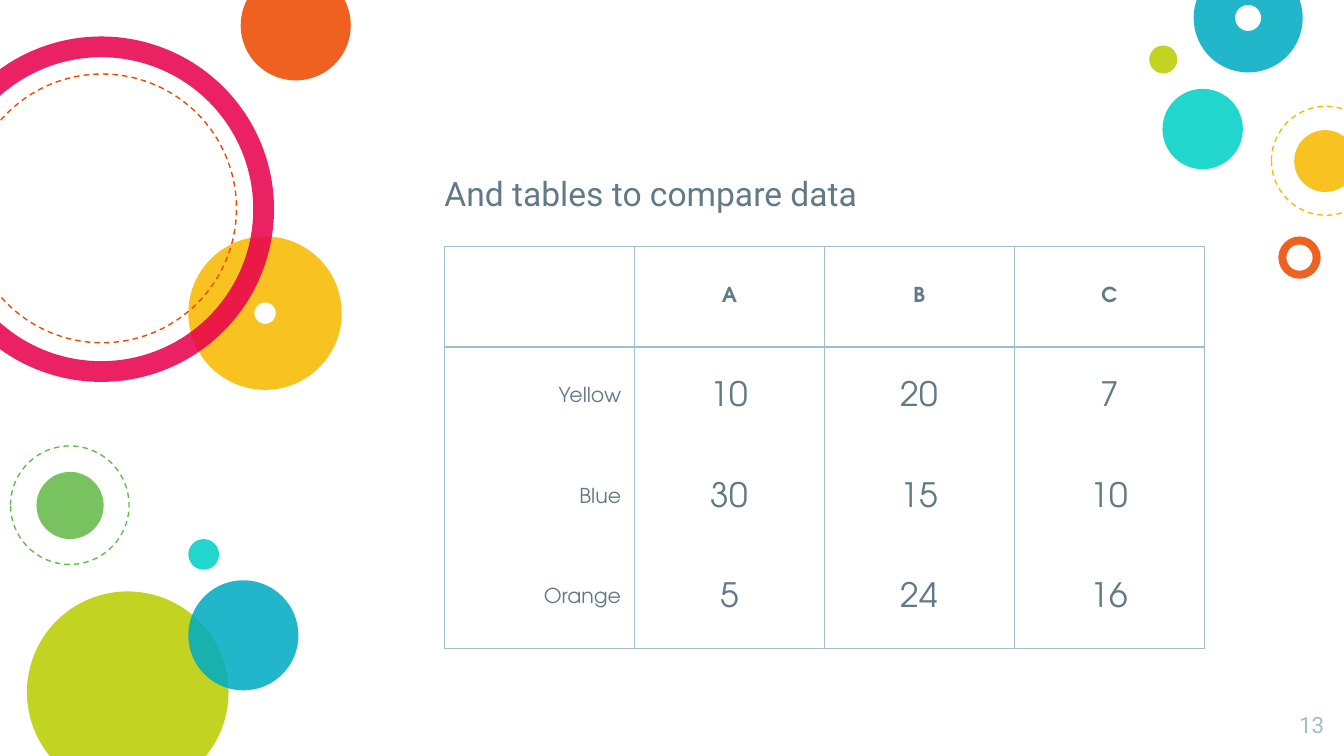
from lxml.etree import SubElement
from pptx import Presentation
from pptx.dml.color import RGBColor as Color
from pptx.enum.dml import MSO_LINE_DASH_STYLE as Dash
from pptx.enum.shapes import MSO_SHAPE as Preset
from pptx.enum.text import MSO_ANCHOR as Anchor, MSO_AUTO_SIZE as AutoSize, PP_ALIGN as Align
from pptx.oxml.ns import qn
from pptx.util import Cm, Pt

THEME = {
    "aqua": "00D1C6", "lime": "BBCD00", "green": "65BB48", "yellow": "F8BB00",
    "orange": "ED4A00", "pink": "E8004C", "blue": "00ACC3",
    "text": "617A86", "pale": "A1BECC",
    "sans": "Roboto", "rounded": "TeX Gyre Adventor",
    "large": 18, "number": 12, "label": 11, "line": 0.75, "opacity": 87,
}


def write(frame, text, color, font, size, align, bold=False):
    para = frame.paragraphs[0]
    para.alignment = align
    span = para.add_run()
    span.text = text
    formats = {"name": THEME[font], "size": Pt(THEME[size]), "bold": bold}
    for name, value in formats.items():
        setattr(span.font, name, value)
    span.font.color.rgb = Color.from_string(THEME[color])


def add_border(cell, side, visible):
    line = SubElement(cell._tc.get_or_add_tcPr(), qn(f"a:ln{side}"), w=str(Pt(THEME["line"])))
    if visible:
        fill = SubElement(line, qn("a:solidFill"))
        SubElement(fill, qn("a:srgbClr"), val=THEME["pale"])
    else:
        SubElement(line, qn("a:noFill"))


deck = Presentation()
deck.slide_width, deck.slide_height = Cm(25.4), Cm(14.29)
page = deck.slides.add_slide(deck.slide_layouts[5])

circles = [
    ("disc", "aqua", 3.56, 10.19, 0.58, None),
    ("disc", "lime", 0.51, 11.18, 3.81, None),
    ("disc", "green", 0.69, 8.92, 1.27, None),
    ("dashed", "green", 0.2, 8.43, 2.24, None),
    ("ring", "yellow", 3.56, 4.47, 2.9, 0.43),
    ("disc", "orange", 4.55, -0.56, 2.08, None),
    ("ring", "pink", -1.35, 0.69, 6.53, 0.06),
    ("dashed", "orange", -0.61, 1.4, 5.08, None),
    ("disc", "blue", 3.56, 10.97, 2.08, None),
    ("disc", "aqua", 21.97, 1.68, 1.52, None),
    ("ring", "orange", 24.16, 4.47, 0.8, 0.19),
    ("disc", "yellow", 24.46, 2.46, 1.17, None),
    ("ring", "blue", 22.56, -0.69, 2.06, 0.38),
    ("disc", "lime", 21.72, 0.86, 0.53, None),
    ("dashed", "yellow", 24.03, 2.01, 2.06, None),
]
for kind, color, left, top, size, thickness in circles:
    preset = Preset.DONUT if kind == "ring" else Preset.OVAL
    circle = page.shapes.add_shape(preset, Cm(left), Cm(top), Cm(size), Cm(size))
    circle.shadow.inherit = False
    if kind == "ring":
        circle.adjustments[0] = thickness
    if kind == "dashed":
        circle.fill.background()
        circle.line.color.rgb = Color.from_string(THEME[color])
        circle.line.width = Pt(THEME["line"])
        circle.line.dash_style = Dash.DASH
    else:
        circle.line.fill.background()
        circle.fill.solid()
        circle.fill.fore_color.rgb = Color.from_string(THEME[color])
        tint = circle._element.spPr.find(qn("a:solidFill"))[0]
        SubElement(tint, qn("a:alpha"), val=str(THEME["opacity"] * 1000))

title = page.shapes.title
number = page.shapes.add_textbox(0, 0, 0, 0)
texts = [
    (title, (8.15, 2.51, 14.66, 1.78), Anchor.BOTTOM,
     ("And tables to compare data", "text", "sans", "large", Align.LEFT)),
    (number, (23.98, 13.2, 1.3, 1.09), Anchor.TOP,
     ("13", "pale", "sans", "number", Align.RIGHT)),
]
for box, place, anchor, content in texts:
    for name, value in zip(("left", "top", "width", "height"), place):
        setattr(box, name, Cm(value))
    formats = {"word_wrap": True, "auto_size": AutoSize.NONE, "vertical_anchor": anchor}
    formats.update({f"margin_{side}": Cm(0.25) for side in ("left", "top", "right", "bottom")})
    for name, value in formats.items():
        setattr(box.text_frame, name, value)
    write(box.text_frame, *content)

rows = [
    ("", "A", "B", "C"),
    ("Yellow", "10", "20", "7"),
    ("Blue", "30", "15", "10"),
    ("Orange", "5", "24", "16"),
]
column_width, row_height = 3.59, 1.9
table = page.shapes.add_table(
    len(rows), len(rows[0]), Cm(8.4), Cm(4.66),
    Cm(column_width * len(rows[0])), Cm(row_height * len(rows))).table
table.first_row = table.horz_banding = False
for column in table.columns:
    column.width = Cm(column_width)
for row_index, row in enumerate(rows):
    table.rows[row_index].height = Cm(row_height)
    for column_index, text in enumerate(row):
        cell = table.cell(row_index, column_index)
        formats = {"vertical_anchor": Anchor.MIDDLE, "margin_left": Cm(0.25),
                   "margin_right": Cm(0.25), "margin_top": Cm(0.18), "margin_bottom": Cm(0.18)}
        for name, value in formats.items():
            setattr(cell, name, value)
        borders = {"L": True, "R": True, "T": row_index < 2,
                   "B": row_index in (0, len(rows) - 1)}
        for side, visible in borders.items():
            add_border(cell, side, visible)
        cell.fill.background()
        header, label = row_index == 0, column_index == 0
        if text:
            write(cell.text_frame, text, "text", "rounded",
                  "label" if header or label else "large",
                  Align.RIGHT if label else Align.CENTER, header)

deck.save("out.pptx")
